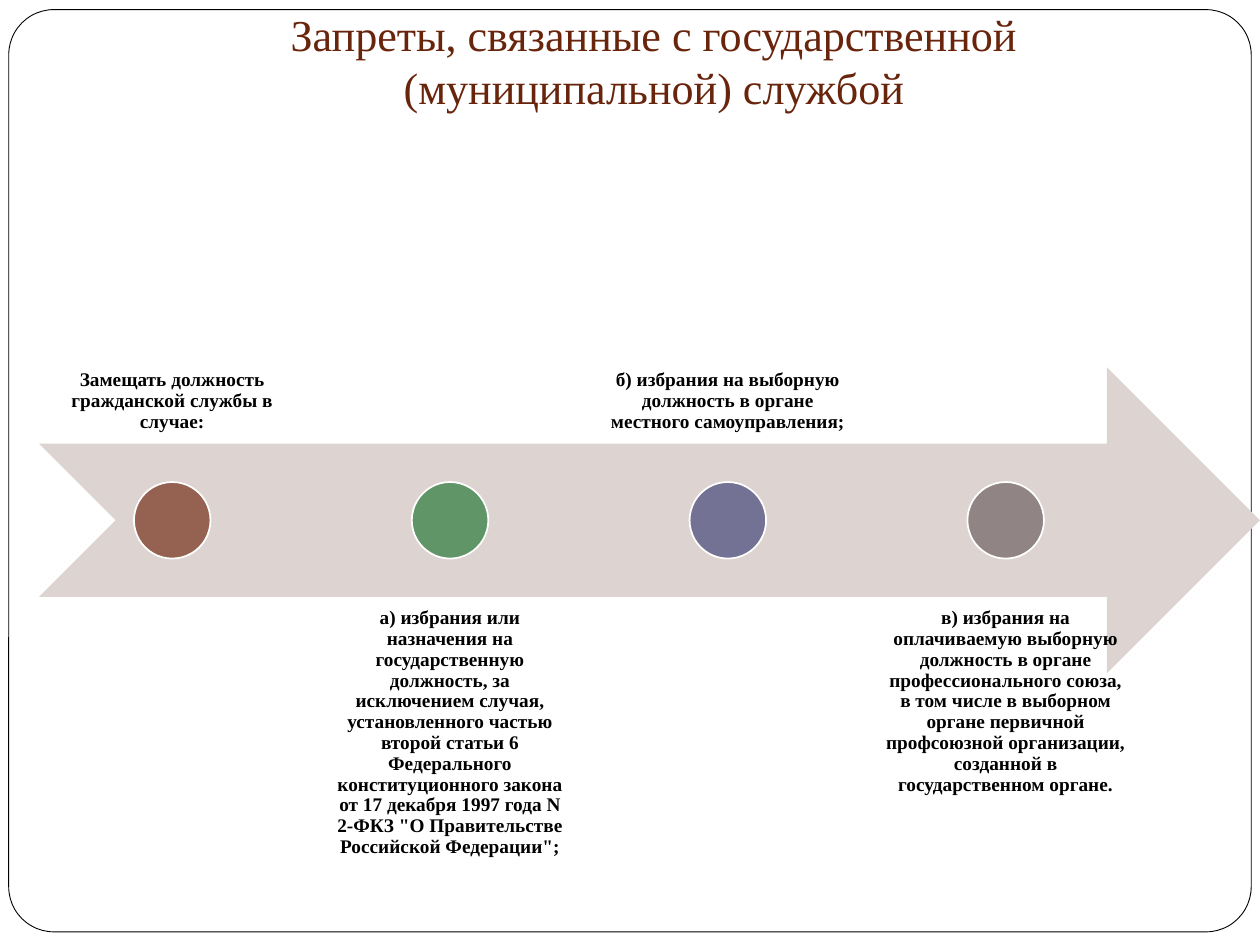
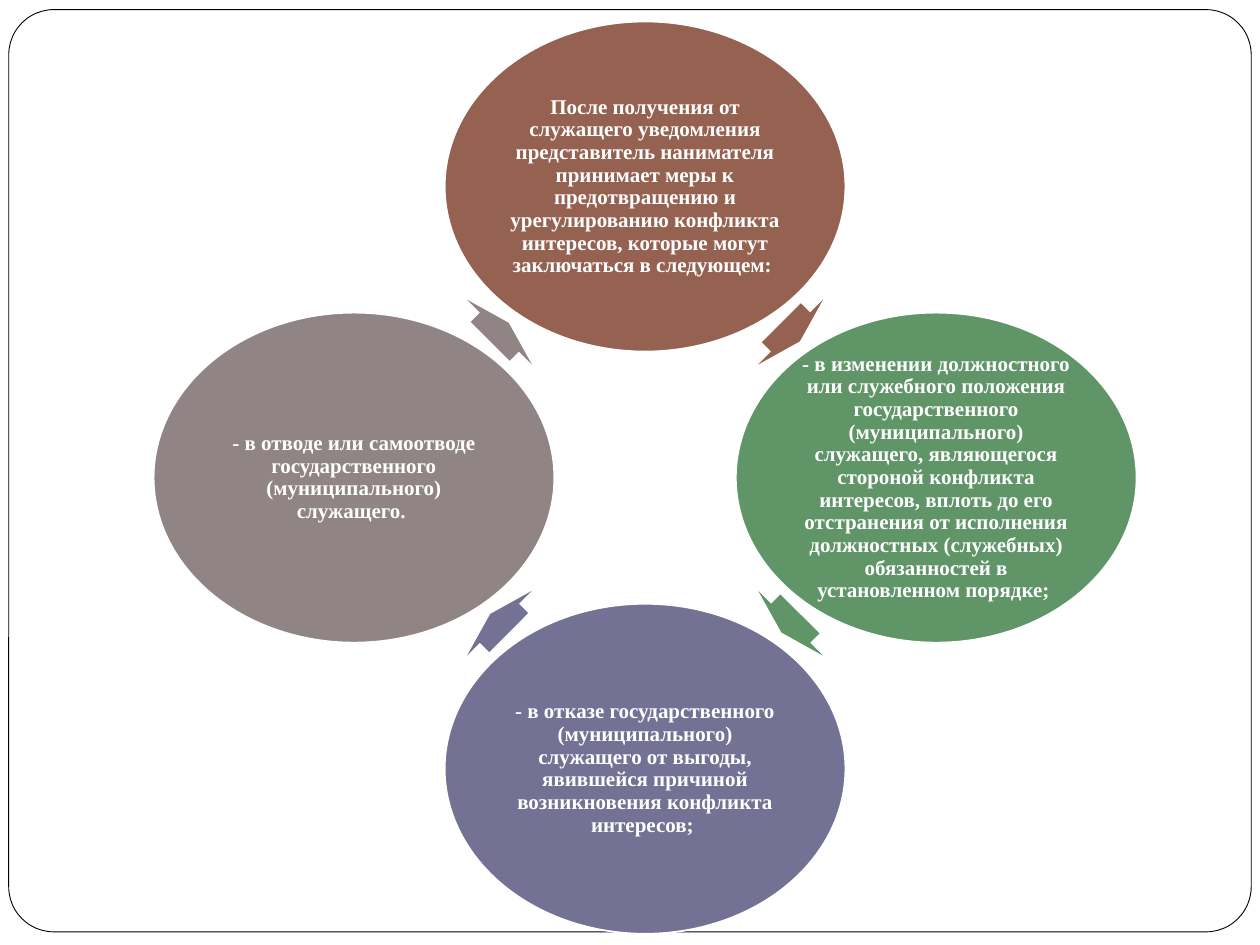
from math import cos, pi, sin

from pptx import Presentation
from pptx.dml.color import RGBColor
from pptx.enum.shapes import MSO_SHAPE as Kind
from pptx.enum.text import MSO_ANCHOR as Anchor, MSO_AUTO_SIZE as Fit, PP_ALIGN as Align
from pptx.util import Pt

FONT = "Times New Roman"
WHITE = RGBColor(0xFF, 0xFF, 0xFF)
BLACK = RGBColor(0, 0, 0)
TITLE = RGBColor(0x69, 0x24, 0x0C)
BAND = RGBColor(0xDD, 0xD3, 0xD0)
HUES = [
    RGBColor(0x95, 0x62, 0x51),
    RGBColor(0x60, 0x95, 0x68),
    RGBColor(0x73, 0x72, 0x94),
    RGBColor(0x91, 0x84, 0x85),
]

BANS = [
    "Замещать должность гражданской службы в случае:",
    "а) избрания или назначения на государственную должность, за исключением случая, "
    "установленного частью второй статьи 6 Федерального конституционного закона "
    "от 17 декабря 1997 года N 2-ФКЗ \"О Правительстве Российской Федерации\";",
    "б) избрания на выборную должность в органе местного самоуправления;",
    "в) избрания на оплачиваемую выборную должность в органе профессионального союза, "
    "в том числе в выборном органе первичной профсоюзной организации, "
    "созданной в государственном органе.",
]
STEPS = [
    "После получения от служащего уведомления представитель нанимателя принимает меры "
    "к предотвращению и урегулированию конфликта интересов, "
    "которые могут заключаться в следующем: ",
    "- в изменении должностного или служебного положения государственного "
    "(муниципального) служащего, являющегося стороной конфликта интересов, вплоть до его "
    "отстранения от исполнения должностных (служебных) обязанностей "
    "в установленном порядке; ",
    "- в отказе государственного (муниципального) служащего от выгоды, явившейся причиной "
    "возникновения конфликта интересов; ",
    "- в отводе или самоотводе государственного (муниципального) служащего. ",
]


def place(x, y, w, h):
    return Pt(x), Pt(y), Pt(w), Pt(h)


def center(x, y, w, h):
    """Return the box of size w by h whose middle is at x, y."""
    return x - w / 2, y - h / 2, w, h


def draw(slide, kind, box, fill, line=None, width=1):
    shape = slide.shapes.add_shape(kind, *place(*box))
    shape.shadow.inherit = False
    shape.fill.solid()
    shape.fill.fore_color.rgb = fill
    if line is None:
        shape.line.fill.background()
    else:
        shape.line.color.rgb = line
        shape.line.width = Pt(width)
    return shape


def write(frame, words, size, color, anchor, pads, bold=True, lead=0.9):
    """Fill a text frame with one centred paragraph; pads run left, top, right, bottom."""
    frame.word_wrap = True
    frame.auto_size = Fit.NONE
    frame.vertical_anchor = anchor
    frame.margin_left, frame.margin_top, frame.margin_right, frame.margin_bottom = map(Pt, pads)
    par = frame.paragraphs[0]
    par.alignment = Align.CENTER
    par.line_spacing = lead
    run = par.add_run()
    run.text = words
    run.font.name = FONT
    run.font.size = Pt(size)
    run.font.bold = bold
    run.font.color.rgb = color


def label(slide, box, words, size, color, anchor, pad):
    frame = slide.shapes.add_textbox(*place(*box)).text_frame
    write(frame, words, size, color, anchor, [pad] * 4)


def add_page(deck, layout):
    """Add a slide with the rounded frame behind everything else."""
    slide = deck.slides.add_slide(deck.slide_layouts.get_by_name(layout))
    frame = draw(slide, Kind.ROUNDED_RECTANGLE, (5, 5.5, 710, 527), WHITE, BLACK, 0.5)
    frame.adjustments[0] = 0.049
    tree = frame.element.getparent()
    tree.insert(2, frame.element)
    return slide


def set_title(slide, words, box):
    title = slide.shapes.title
    title.left, title.top, title.width, title.height = place(*box)
    write(title.text_frame, words, 25.2, TITLE, Anchor.BOTTOM,
          (7.2, 3.6, 7.2, 7.2), bold=False, lead=1)


def add_line(slide, box, words):
    """Draw a wide arrow with one dot per step, labels above and below in turn."""
    x, y, w, h = box
    col, deep, dot = 151.2, 0.4 * h, 0.1 * h
    pitch = 1.05 * col
    draw(slide, Kind.NOTCHED_RIGHT_ARROW, (x, y + 0.3 * h, w, deep), BAND)
    for i, (text, hue) in enumerate(zip(words, HUES)):
        left = x + 0.4 + i * pitch
        low = i % 2
        top = y + (h - deep if low else 0)
        label(slide, (left, top, col, deep), text, 11, BLACK,
              Anchor.TOP if low else Anchor.BOTTOM, 6.5)
        draw(slide, Kind.OVAL, center(left + col / 2, y + h / 2, dot, dot), hue, WHITE)


def add_ring(slide, box, words):
    """Draw four ovals on a circle, with an arrow between each pair of neighbours."""
    x, y, w, h = box
    wide, high = 229, 188.6
    mid_x, mid_y, reach = x + w / 2, y + h / 2, (h - high) / 2
    turn = 2 * pi / len(words)
    for i, (text, hue) in enumerate(zip(words, HUES)):
        angle = i * turn
        spot = mid_x + reach * sin(angle), mid_y - reach * cos(angle)
        draw(slide, Kind.OVAL, center(*spot, wide, high), hue, WHITE)
        label(slide, center(*spot, 162, 134), text, 12, WHITE, Anchor.MIDDLE, 1.4)
        angle += turn / 2
        gap = reach * cos(turn / 2)
        spot = mid_x + gap * sin(angle), mid_y - gap * cos(angle)
        arrow = draw(slide, Kind.RIGHT_ARROW, center(*spot, 15, 52.5), hue)
        arrow.adjustments[0], arrow.adjustments[1] = 0.6, 0.5
        arrow.rotation = 45 + 360 / len(words) * i


def main():
    deck = Presentation()
    deck.slide_width, deck.slide_height = Pt(720), Pt(540)

    bans = add_page(deck, "Title Only")
    set_title(bans, "Запреты, связанные с государственной (муниципальной) службой",
              (67.7, 22.3, 612, 49.7))
    add_line(bans, (22.4, 78.6, 697.6, 437.4), BANS)

    steps = add_page(deck, "Blank")
    add_ring(steps, (87.8, 12.3, 561.6, 521.3), STEPS)

    deck.save("out.pptx")


if __name__ == "__main__":
    main()
